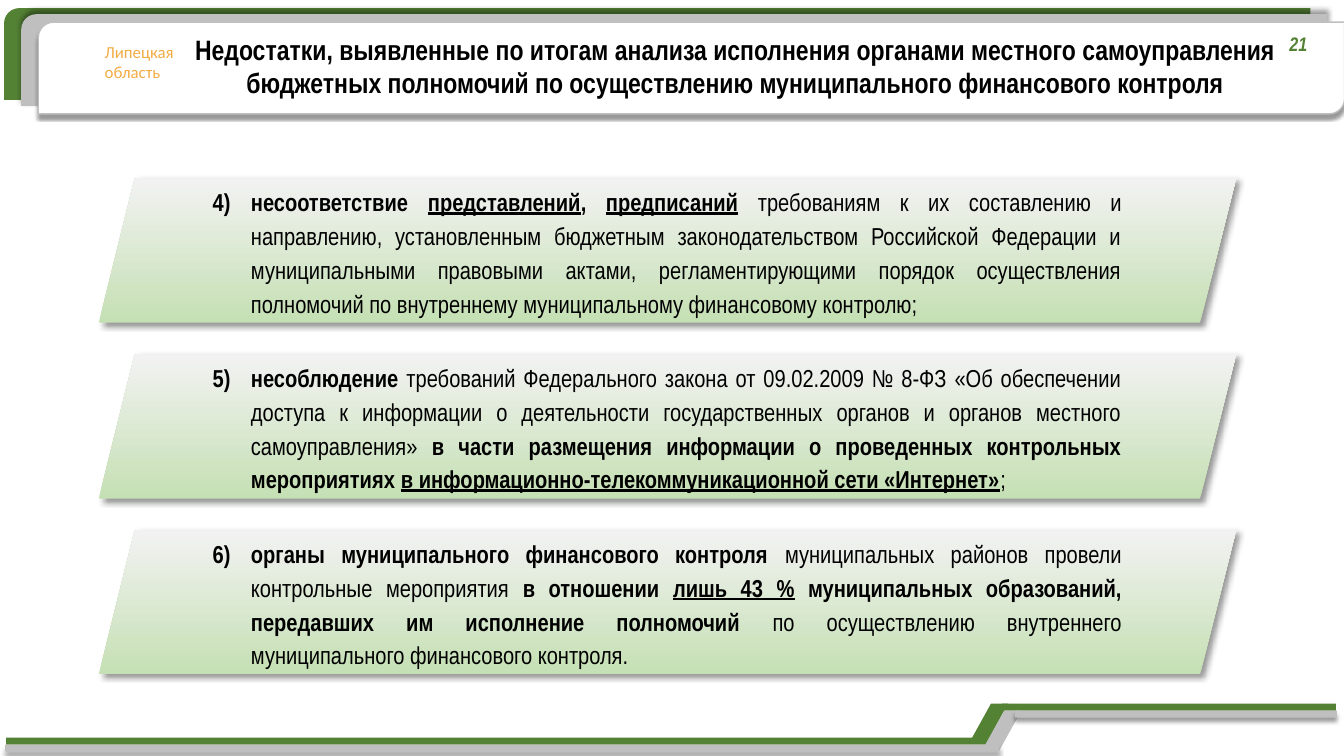
from lxml import etree
from pptx import Presentation
from pptx import util as u
from pptx.dml.color import RGBColor
from pptx.enum import shapes as kinds, text as t
from pptx.oxml import ns

GREEN = RGBColor(0x54, 0x82, 0x35)
GRAY = RGBColor(0xBF, 0xBF, 0xBF)
WHITE = RGBColor(0xFF, 0xFF, 0xFF)
BLACK = RGBColor(0, 0, 0)
ORANGE = RGBColor(0xF2, 0xAC, 0x44)
CARD_BOTTOM = RGBColor(0xC5, 0xE0, 0xB4)
CARD_TOP = RGBColor(0xF2, 0xF2, 0xF2)

WIDTH, HEIGHT = u.Inches(13.33), u.Inches(7.5)
CARD_TOP_ROW, CARD_STEP = 23.6, 23.27
BAND, SLANT_HEIGHT, SLANT_SHIFT = 0.93, 5.3, 1.65
FOOT, HEAD_START = 1.28, 2.47

TITLE_FONT = {"name": "Arial Narrow", "size": u.Pt(20), "bold": True}
NUMBER_FONT = {"name": "Arial Narrow", "size": u.Pt(14), "bold": True, "italic": True}
REGION_FONT = {"name": "Calibri", "size": u.Pt(12)}
CARD_FONT = {"name": "Arial Narrow", "size": u.Pt(17.5)}
PLAIN = {"bold": False}
BOLD = {"bold": True}
MARKED = {"bold": True, "underline": True}

TITLE = ("Недостатки, выявленные по итогам анализа исполнения органами местного "
         "самоуправления бюджетных полномочий по осуществлению муниципального "
         "финансового контроля")
FINDINGS = [
    [("несоответствие ", BOLD), ("представлений", MARKED), (", ", BOLD),
     ("предписаний", MARKED), (" ", BOLD),
     ("требованиям к их составлению и направлению, установленным бюджетным "
      "законодательством Российской Федерации и муниципальными правовыми актами, "
      "регламентирующими порядок осуществления полномочий по внутреннему "
      "муниципальному финансовому контролю;", PLAIN)],
    [("несоблюдение", BOLD),
     (" требований Федерального закона от 09.02.2009 № 8-ФЗ «Об обеспечении доступа "
      "к информации о деятельности государственных органов и органов местного "
      "самоуправления» ", PLAIN),
     ("в части размещения информации о проведенных контрольных мероприятиях ", BOLD),
     ("в информационно-телекоммуникационной сети «Интернет»", MARKED), (";", PLAIN)],
    [("органы муниципального финансового контроля ", BOLD),
     ("муниципальных районов провели контрольные мероприятия ", PLAIN),
     ("в отношении ", BOLD), ("лишь 43 %", MARKED),
     (" муниципальных образований, передавших им исполнение полномочий", BOLD),
     (" по осуществлению внутреннего муниципального финансового контроля.", PLAIN)],
]


def across(share):
    return int(WIDTH * share / 100)


def down(share):
    return int(HEIGHT * share / 100)


def box(left, top, width, height):
    return across(left), down(top), across(width), down(height)


def apply(target, values):
    for name, value in values.items():
        setattr(target, name, value)


def write(paragraph, wording, style, color):
    run = paragraph.add_run()
    run.text = wording
    apply(run.font, style)
    run.font.color.rgb = color


def cast_shadow(shape, blur, distance, angle):
    effects = shape._element.spPr.find(ns.qn("a:effectLst"))
    shadow = etree.SubElement(effects, ns.qn("a:outerShdw"), {
        "blurRad": str(u.Pt(blur)), "dist": str(u.Pt(distance)),
        "dir": str(angle * 60000), "algn": "tl", "rotWithShape": "0"})
    tint = etree.SubElement(shadow, ns.qn("a:srgbClr"), val=str(BLACK))
    etree.SubElement(tint, ns.qn("a:alpha"), val="40000")


def paint(shape, color, shadow=None):
    shape.shadow.inherit = False
    shape.fill.solid()
    shape.fill.fore_color.rgb = color
    shape.line.fill.background()
    if shadow:
        cast_shadow(shape, *shadow)


def add_plate(slide, left, top, color, shadow):
    plate = slide.shapes.add_shape(
        kinds.MSO_SHAPE.ROUND_2_DIAG_RECTANGLE, *box(left, top, 97.2, 12.13))
    paint(plate, color, shadow)
    return plate


def add_ribbon(slide, left, top, start, end, color, shadow):
    corners = [(left, top + SLANT_HEIGHT), (left + SLANT_SHIFT, top),
               (left + SLANT_SHIFT + FOOT, top), (left + FOOT, top + SLANT_HEIGHT)]
    points = [(across(x), down(y)) for x, y in corners]
    outline = slide.shapes.build_freeform(*points[0])
    outline.add_line_segments(points[1:], close=True)
    paint(outline.convert_to_shape(), color)
    bands = [(start, top + SLANT_HEIGHT - BAND + 0.13, left + FOOT - start),
             (left + HEAD_START, top, end - left - HEAD_START)]
    for x, y, width in bands:
        band = slide.shapes.add_shape(
            kinds.MSO_SHAPE.RECTANGLE, *box(x, y, width, BAND))
        paint(band, color, shadow)


def add_label(slide, place, lines, style, color, wrap):
    frame = slide.shapes.add_textbox(*box(*place)).text_frame
    frame.word_wrap = wrap
    for index, line in enumerate(lines):
        paragraph = frame.add_paragraph() if index else frame.paragraphs[0]
        write(paragraph, line, style, color)


def add_title(slide):
    title = slide.shapes.title
    apply(title, dict(zip(("left", "top", "width", "height"),
                          box(13.13, 3.6, 83.12, 10.27))))
    apply(title.text_frame, {"word_wrap": True, "auto_size": t.MSO_AUTO_SIZE.NONE,
                             "vertical_anchor": t.MSO_ANCHOR.TOP})
    heading = title.text_frame.paragraphs[0]
    heading.alignment = t.PP_ALIGN.CENTER
    write(heading, TITLE, TITLE_FONT, BLACK)
    slide.shapes._spTree.append(title._element)


def add_finding(slide, top, number, wording):
    card = slide.shapes.add_shape(
        kinds.MSO_SHAPE.PARALLELOGRAM, *box(7.35, top, 84.62, 19.07))
    card.shadow.inherit = False
    card.fill.gradient()
    card.fill.gradient_angle = 90
    for stop, color, position in zip(
            card.fill.gradient_stops, (CARD_BOTTOM, CARD_TOP), (0, 1)):
        stop.color.rgb = color
        stop.position = position
    card.line.fill.background()
    cast_shadow(card, 4, 3, 45)
    margin = u.Inches(0.04)
    apply(card.text_frame, {
        "margin_left": margin, "margin_right": margin, "margin_top": margin,
        "margin_bottom": margin, "word_wrap": True,
        "vertical_anchor": t.MSO_ANCHOR.MIDDLE})
    finding = card.text_frame.paragraphs[0]
    properties = finding._p.get_or_add_pPr()
    indent = u.Inches(0.38)
    properties.set("marL", str(indent))
    properties.set("indent", str(-indent))
    etree.SubElement(properties, ns.qn("a:buFont"), typeface="+mj-lt")
    etree.SubElement(properties, ns.qn("a:buAutoNum"),
                     type="arabicParenR", startAt=str(number))
    apply(finding, {"alignment": t.PP_ALIGN.JUSTIFY, "line_spacing": 1.15})
    for words, emphasis in wording:
        write(finding, words, {**CARD_FONT, **emphasis}, BLACK)


def main():
    deck = Presentation()
    apply(deck, {"slide_width": WIDTH, "slide_height": HEIGHT})
    slide = deck.slides.add_slide(deck.slide_layouts[5])

    add_plate(slide, 0.3, 1.07, GREEN, None)
    add_plate(slide, 1.58, 1.87, GRAY, (4, 3, 270))
    front = add_plate(slide, 2.85, 2.93, WHITE, (2, 3, 90))
    front.line.color.rgb = GRAY
    front.line.width = u.Pt(1)
    add_label(slide, (7.05, 4.8, 6.83, 6.67), ["Липецкая", "область"],
              REGION_FONT, ORANGE, True)

    add_ribbon(slide, 72.09, 93.07, 0.45, 99.4, GREEN, None)
    add_ribbon(slide, 73.07, 94, 0.38, 99.47, GRAY, (3, 3, 90))

    add_title(slide)
    add_label(slide, (95.2, 3.6, 2.85, 4.53), ["21"], NUMBER_FONT, GREEN, False)
    for row, wording in enumerate(FINDINGS):
        add_finding(slide, CARD_TOP_ROW + row * CARD_STEP, row + 4, wording)

    deck.save("out.pptx")


if __name__ == "__main__":
    main()
